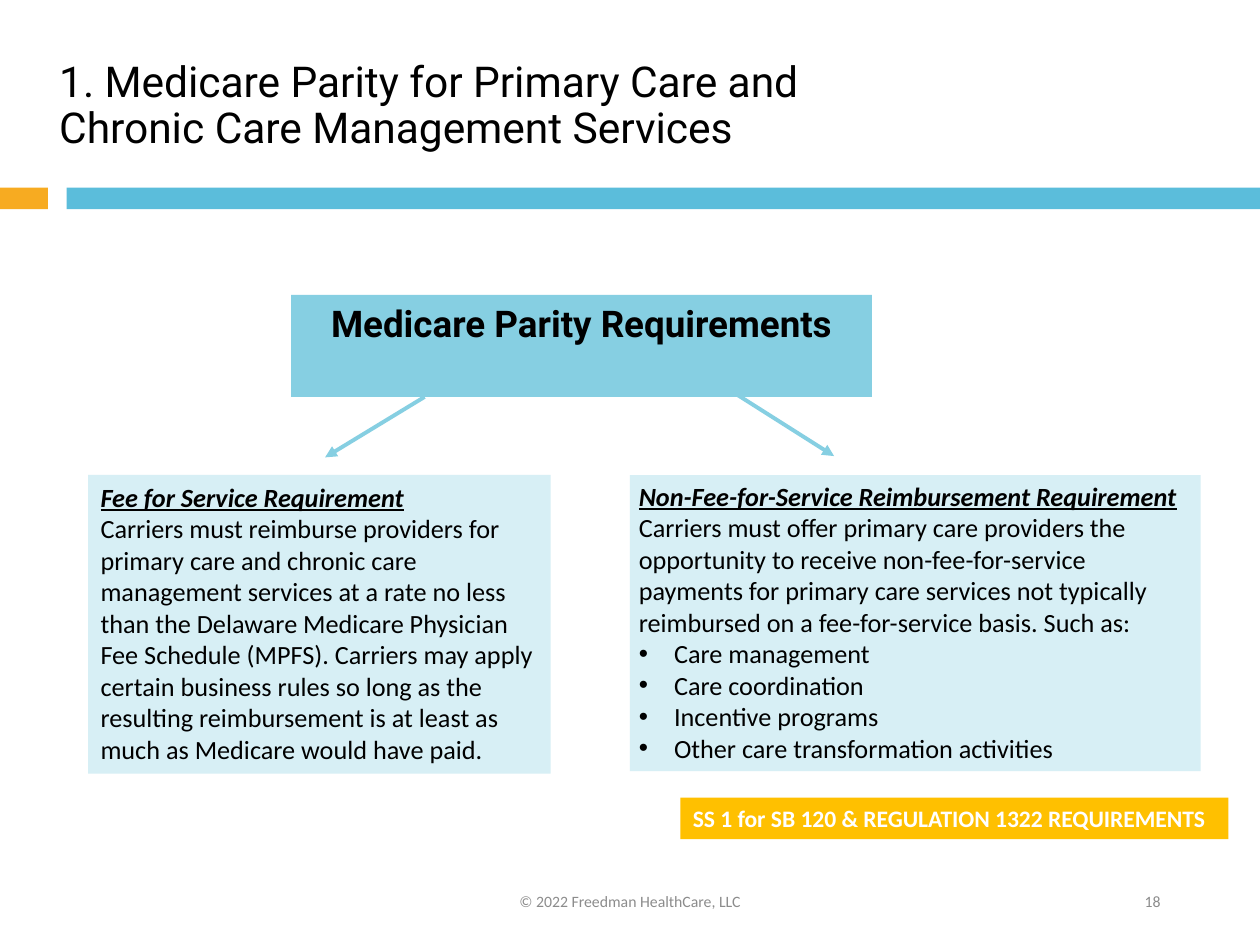
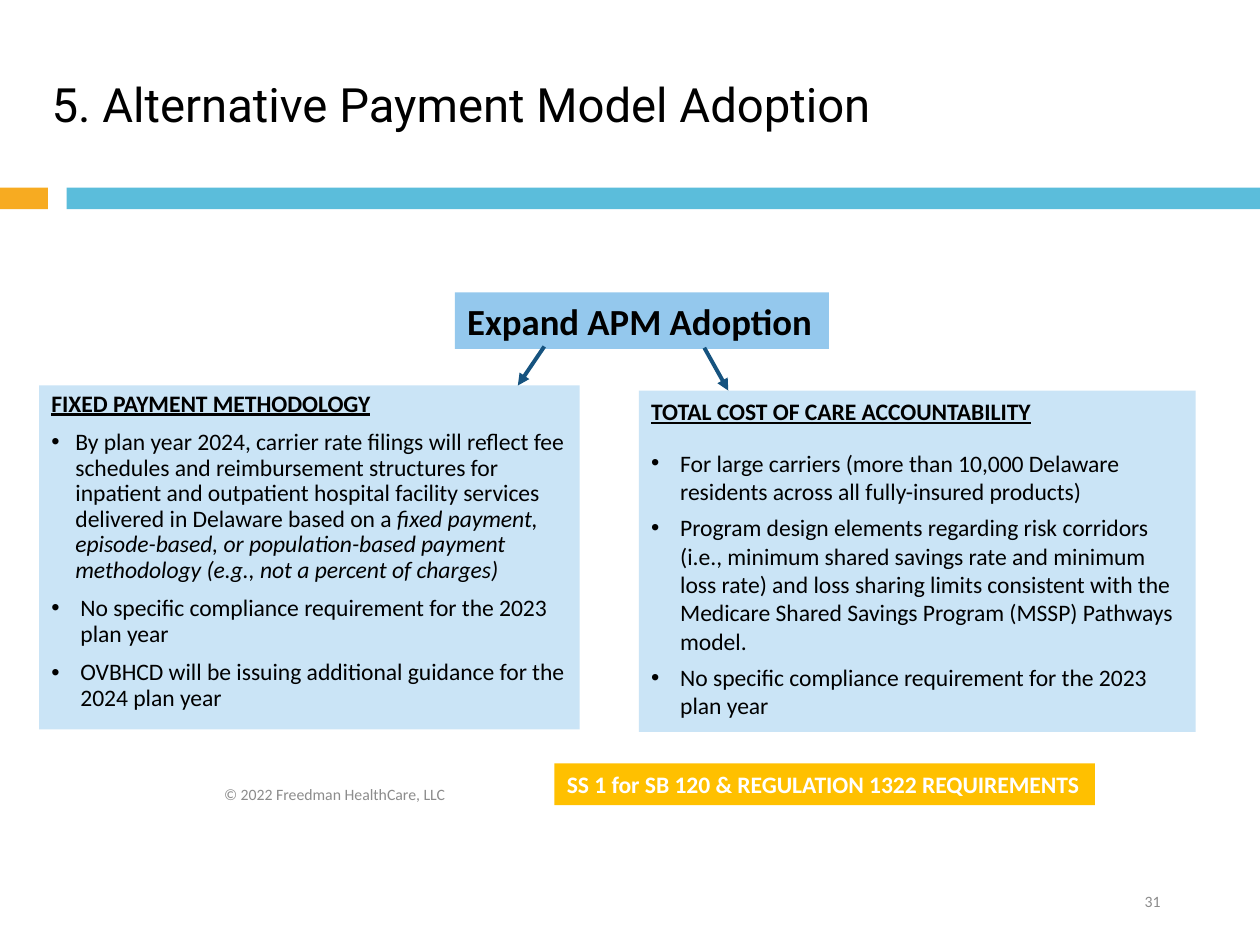
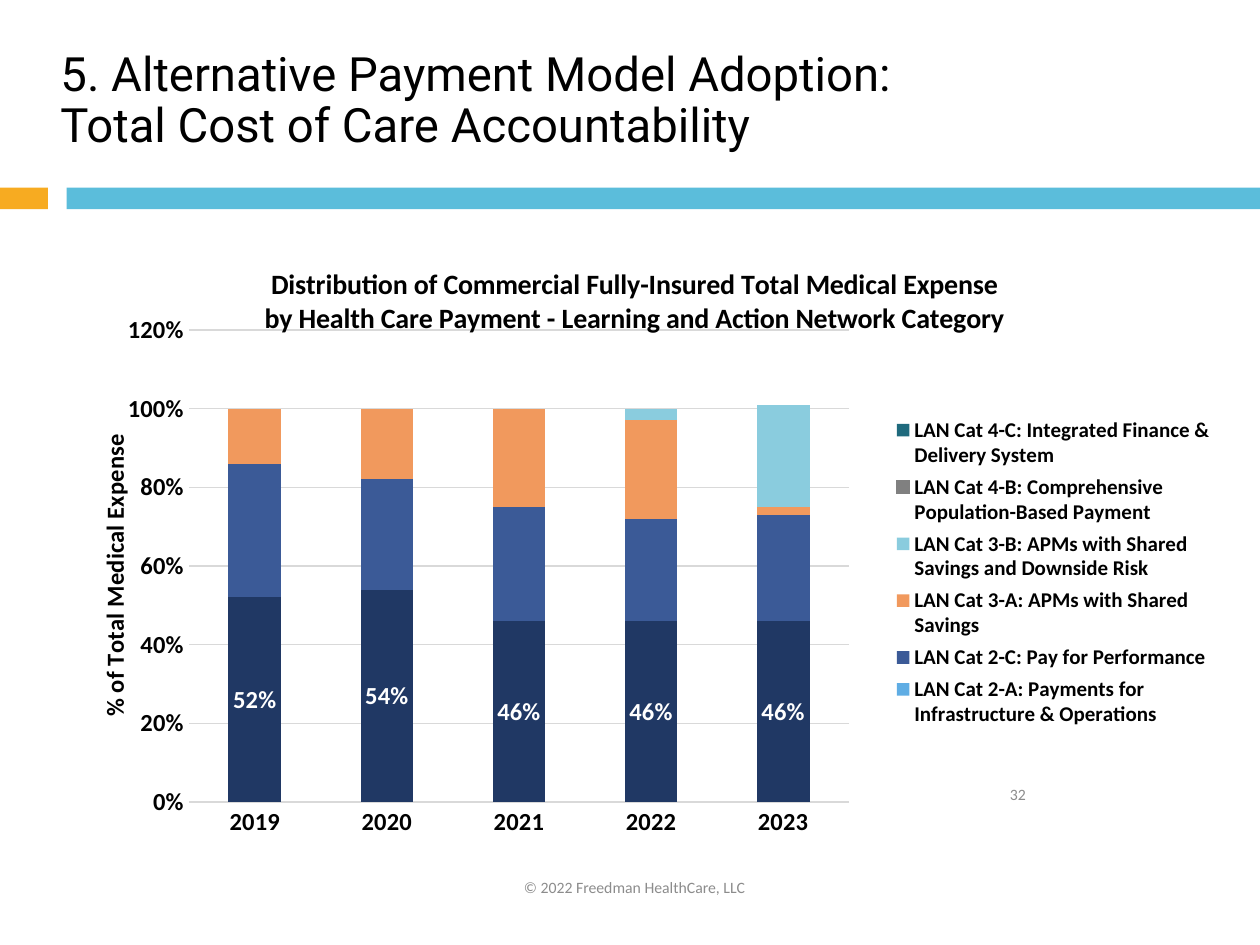
from lxml import etree
from pptx import Presentation
from pptx.chart.data import CategoryChartData
from pptx.dml.color import RGBColor
from pptx.enum.chart import (XL_CHART_TYPE, XL_LABEL_POSITION,
                             XL_LEGEND_POSITION, XL_TICK_MARK)
from pptx.enum.shapes import MSO_CONNECTOR, MSO_SHAPE
from pptx.enum.text import MSO_ANCHOR, MSO_AUTO_SIZE, PP_ALIGN
from pptx.oxml.ns import qn
from pptx.util import Inches, Pt

RECT, LINE = MSO_SHAPE.RECTANGLE, MSO_CONNECTOR.STRAIGHT
TOP, MIDDLE = MSO_ANCHOR.TOP, MSO_ANCHOR.MIDDLE
LEFT, CENTER, RIGHT = PP_ALIGN.LEFT, PP_ALIGN.CENTER, PP_ALIGN.RIGHT
STACK, NO_TICK = XL_CHART_TYPE.COLUMN_STACKED, XL_TICK_MARK.NONE

WIDE, HIGH = Inches(10), Inches(7.5)
COL, ROW = WIDE / 100, HIGH / 75  # grid of 100 columns by 75 rows

BODY, HEAD = "Calibri", "Roboto"
BLACK, WHITE, GREY, RULE = "000000", "FFFFFF", "8C8C8C", "D9D9D9"
ORANGE, BLUE, GOLD = "F7AB21", "5BBDDB", "FFC000"
TEAL, PALE = "86CFE2", "D7EFF5"
SKY, MIST, NAVY = "94C8ED", "CAE4F6", "16537F"

COPY = "© 2022 Freedman HealthCare, LLC"
TAG = "SS 1 for SB 120 & REGULATION 1322 REQUIREMENTS"


def rgb(code):
    return RGBColor.from_string(code)


def grid(x, y, w, h):
    return int(x * COL), int(y * ROW), int(w * COL), int(h * ROW)


def style(font, size, color=BLACK, marks="", face=BODY):
    """Format a font; marks holds b, i and u for bold, italic, underline."""
    font.name, font.size = face, Pt(size)
    font.color.rgb = rgb(color)
    font.bold, font.italic = "b" in marks, "i" in marks
    font.underline = "u" in marks


def bullet(para, dent):
    props = para._p.get_or_add_pPr()
    step = Inches(dent)
    props.set("marL", str(step))
    props.set("indent", str(-step))
    etree.SubElement(props, qn("a:buFont")).set("typeface", "Arial")
    etree.SubElement(props, qn("a:buChar")).set("char", "•")


def write(frame, lines, size, color=BLACK, face=BODY, align=LEFT,
          lead=1.0, anchor=TOP):
    """Fill a frame with lines of (runs, dent, gap); a run is (text, marks)."""
    frame.word_wrap = True
    frame.auto_size = MSO_AUTO_SIZE.NONE
    frame.vertical_anchor = anchor
    for n, (runs, dent, gap) in enumerate(lines):
        para = frame.add_paragraph() if n else frame.paragraphs[0]
        para.alignment, para.line_spacing = align, lead
        para.space_before = Pt(gap)
        if dent:
            bullet(para, dent)
        for text, marks in runs:
            run = para.add_run()
            run.text = text
            style(run.font, size, color, marks, face)


def line(text, marks="", dent=0, gap=0):
    return [(text, marks)], dent, gap


def panel(slide, box, fill, lines=(), size=13.5, inset=None, **look):
    shape = slide.shapes.add_shape(RECT, *grid(*box))
    shape.shadow.inherit = False
    shape.fill.solid()
    shape.fill.fore_color.rgb = rgb(fill)
    shape.line.fill.background()
    frame = shape.text_frame
    if inset:
        frame.margin_left = frame.margin_right = Inches(inset[0])
        frame.margin_top = frame.margin_bottom = Inches(inset[1])
    write(frame, lines, size, **look)
    return shape


def arrow(slide, ends, color):
    x, y, to_x, to_y = ends
    link = slide.shapes.add_connector(
        LINE, *grid(x, y, to_x, to_y))
    link.line.color.rgb = rgb(color)
    link.line.width = Pt(2.25)
    tip = etree.SubElement(link.line._get_or_add_ln(), qn("a:tailEnd"))
    tip.set("type", "triangle")
    etree.SubElement(link._element.spPr, qn("a:effectLst"))


def note(slide, box, text, align):
    frame = slide.shapes.add_textbox(*grid(*box)).text_frame
    write(frame, [line(text)], 9, GREY, align=align, anchor=MIDDLE)


def base(deck, title, box, size, copy, number, spot):
    """Add a slide with title, bands, copyright line and slide number."""
    slide = deck.slides.add_slide(deck.slide_layouts[5])
    panel(slide, (0, 14.9, 3.8, 1.7), ORANGE)
    panel(slide, (5.3, 14.9, 94.7, 1.7), BLUE)
    head = slide.shapes.title
    head.left, head.top, head.width, head.height = grid(*box)
    write(head.text_frame, [line(title)], size, face=HEAD, lead=0.9,
          anchor=MIDDLE)
    note(slide, copy, COPY, CENTER)
    note(slide, spot, number, RIGHT)
    return slide


def tag(slide, box):
    panel(slide, box, GOLD, [line(TAG, "b")], color=WHITE)


def parity(deck):
    slide = base(deck, "1. Medicare Parity for Primary Care and Chronic Care "
                 "Management Services", (3.7, 3, 65.5, 10.9), 24.3,
                 (33.1, 69.5, 33.8, 4), "18", (70.6, 69.5, 22.5, 4))
    tag(slide, (54, 63.3, 43.5, 3.3))
    items = ("Care management", "Care coordination", "Incentive programs",
             "Other care transformation activities")
    panel(slide, (50, 37.7, 45.3, 23.5), PALE, [
        line("Non-Fee-for-Service Reimbursement Requirement", "biu"),
        line("Carriers must offer primary care providers the opportunity to "
             "receive non-fee-for-service payments for primary care services "
             "not typically reimbursed on a fee-for-service basis. Such as:"),
        *(line(item, dent=0.28) for item in items)], 15, (0.07, 0.04))
    panel(slide, (7, 37.7, 36.7, 23.7), PALE, [
        line("Fee for Service Requirement", "biu"),
        line("Carriers must reimburse providers for primary care and chronic "
             "care management services at a rate no less than the Delaware "
             "Medicare Physician Fee Schedule (MPFS). Carriers may apply "
             "certain business rules so long as the resulting reimbursement "
             "is at least as much as Medicare would have paid.")], 15)
    panel(slide, (23.1, 23.4, 46.1, 8.1), TEAL,
          [line("Medicare Parity Requirements", "b")], 21, face=HEAD,
          align=CENTER)
    for ends in ((58.3, 31.2, 66.2, 36.2), (33.7, 31.5, 25.8, 36.3)):
        arrow(slide, ends, TEAL)


def adopt(deck):
    slide = base(deck, "5. Alternative Payment Model Adoption",
                 (3.1, 5.3, 72.2, 6.4), 27, (15.3, 61.5, 22.5, 3),
                 "31", (70.6, 69.5, 22.5, 4))
    none = "No specific compliance requirement for the 2023 plan year"
    panel(slide, (3.1, 30.6, 42.9, 27.3), MIST, [
        line("FIXED PAYMENT METHODOLOGY", "bu"),
        ([("By plan year 2024, carrier rate filings will reflect fee "
           "schedules and reimbursement structures for inpatient and "
           "outpatient hospital facility services delivered in Delaware "
           "based on a ", ""),
          ("fixed payment, episode-based, or population-based payment "
           "methodology (e.g., not a percent of charges)", "i")], 0.19, 7.5),
        line(none, dent=0.23, gap=7.5),
        line("OVBHCD will be issuing additional guidance for the 2024 plan "
             "year", dent=0.23, gap=7.5)], lead=0.9)
    tag(slide, (44, 60.6, 42.9, 3.3))
    head = panel(slide, (36.1, 23.2, 29.7, 4.5), SKY,
                 [line("Expand APM Adoption", "b")], 21)
    head.text_frame.word_wrap = False
    panel(slide, (50.7, 31, 44.2, 27.1), MIST, [
        line("TOTAL COST OF CARE ACCOUNTABILITY", "bu"),
        line("For large carriers (more than 10,000 Delaware residents across "
             "all fully-insured products)", dent=0.23, gap=13.5),
        line("Program design elements regarding risk corridors (i.e., minimum "
             "shared savings rate and minimum loss rate) and loss sharing "
             "limits consistent with the Medicare Shared Savings Program "
             "(MSSP) Pathways model.", dent=0.23, gap=4.5),
        line(none, dent=0.23, gap=4.5)])
    for ends in ((43.2, 27.5, 41.1, 30.6), (55.9, 27.6, 57.8, 31)):
        arrow(slide, ends, NAVY)


YEARS = ("2019", "2020", "2021", "2022", "2023")
ZERO = (0,) * len(YEARS)
SERIES = (
    ("Series 1", "203864", (0.52, 0.54, 0.46, 0.46, 0.46)),
    ("LAN Cat 2-A: Payments for Infrastructure & Operations", "5FADE4", ZERO),
    ("Series 3", "36AFCE", ZERO),
    ("LAN Cat 2-C: Pay for Performance", "3B5A97",
     (0.34, 0.28, 0.29, 0.26, 0.27)),
    ("LAN Cat 3-A: APMs with Shared Savings", "F1995D",
     (0.14, 0.18, 0.25, 0.25, 0.02)),
    ("LAN Cat 3-B: APMs with Shared Savings and Downside Risk", "8ACCDE",
     (0, 0, 0, 0.03, 0.26)),
    ("Series 7", "115C48", ZERO),
    ("LAN Cat 4-B: Comprehensive Population-Based Payment", "808080", ZERO),
    ("LAN Cat 4-C: Integrated Finance & Delivery System", "1F6A7D", ZERO),
)
MUTE = (0, 2, 6)  # series without a legend entry
EDGED = 7         # series drawn with an outline


def pin(node, at, inner=False, **sides):
    """Give a chart part a manual layout, as shares of the chart."""
    for old in node.findall(qn("c:layout")):
        node.remove(old)
    layout = etree.Element(qn("c:layout"))
    node.insert(at, layout)
    manual = etree.SubElement(layout, qn("c:manualLayout"))
    modes = [("layoutTarget", "inner")] if inner else []
    modes += [("xMode", "edge"), ("yMode", "edge")]
    for name, value in modes + list(sides.items()):
        etree.SubElement(manual, qn("c:" + name)).set("val", str(value))


def caption(title, text, size, x, y):
    title.text_frame.text = text
    for para in title.text_frame.paragraphs:
        style(para.font, size, marks="b")
        for run in para.runs:
            style(run.font, size, marks="b")
    pin(title._element, 1, x=x, y=y)


def legend(chart):
    chart.has_legend = True
    key = chart.legend
    key.position = XL_LEGEND_POSITION.RIGHT
    key.include_in_layout = False
    style(key.font, 12, marks="b")
    pin(key._element, 1, x=0.71, y=0.28, w=0.28, h=0.52)
    for n in reversed(MUTE):
        entry = etree.Element(qn("c:legendEntry"))
        etree.SubElement(entry, qn("c:idx")).set("val", str(n))
        etree.SubElement(entry, qn("c:delete")).set("val", "1")
        key._element.insert(1, entry)


def axes(chart):
    cat, val = chart.category_axis, chart.value_axis
    for axis in (cat, val):
        axis.major_tick_mark = axis.minor_tick_mark = NO_TICK
        style(axis.tick_labels.font, 14, marks="b")
    cat.format.line.color.rgb = rgb(RULE)
    cat.format.line.width = Pt(0.75)
    val.format.line.fill.background()
    val.minimum_scale, val.maximum_scale, val.major_unit = 0, 1.2, 0.2
    rules = val.major_gridlines.format.line
    rules.color.rgb, rules.width = rgb(RULE), Pt(0.75)
    val.tick_labels.number_format = "0%"
    val.tick_labels.number_format_is_linked = False
    caption(val.axis_title, "% of Total Medical Expense", 14, 0.05, 0.31)


def bars(slide, box):
    data = CategoryChartData(number_format="0%")
    data.categories = YEARS
    for name, _, values in SERIES:
        data.add_series(name, values)
    chart = slide.shapes.add_chart(STACK, *grid(*box), data).chart
    style(chart.font, 10)
    chart.has_title = True
    caption(chart.chart_title,
            "Distribution of Commercial Fully-Insured Total Medical Expense\n"
            "by Health Care Payment - Learning and Action Network Category",
            16, 0.19, 0.04)
    plot = chart.plots[0]
    plot.gap_width, plot.overlap, plot.vary_by_categories = 150, 100, False
    for series, (_, color, _) in zip(plot.series, SERIES):
        series.format.fill.solid()
        series.format.fill.fore_color.rgb = rgb(color)
    edge = plot.series[EDGED].format.line
    edge.color.rgb, edge.width = rgb(SERIES[EDGED][1]), Pt(0.75)
    labels = plot.series[0].data_labels
    labels.show_value = True
    labels.position = XL_LABEL_POSITION.CENTER
    labels.number_format, labels.number_format_is_linked = "0%", False
    style(labels.font, 14, WHITE, "b")
    axes(chart)
    legend(chart)
    area = chart._chartSpace.chart.plotArea
    pin(area, 0, inner=True, x=0.13, y=0.15, w=0.55, h=0.76)


def spend(deck):
    slide = base(deck, "5. Alternative Payment Model Adoption: Total Cost of "
                 "Care Accountability", (3.8, 4.6, 70.4, 7), 27,
                 (37, 68.9, 26.7, 3), "32", (65.5, 61.5, 16.9, 3))
    bars(slide, (2.6, 18.8, 95.3, 49.3))


def main():
    deck = Presentation()
    deck.slide_width, deck.slide_height = WIDE, HIGH
    for build in (parity, adopt, spend):
        build(deck)
    deck.save("out.pptx")


if __name__ == "__main__":
    main()
